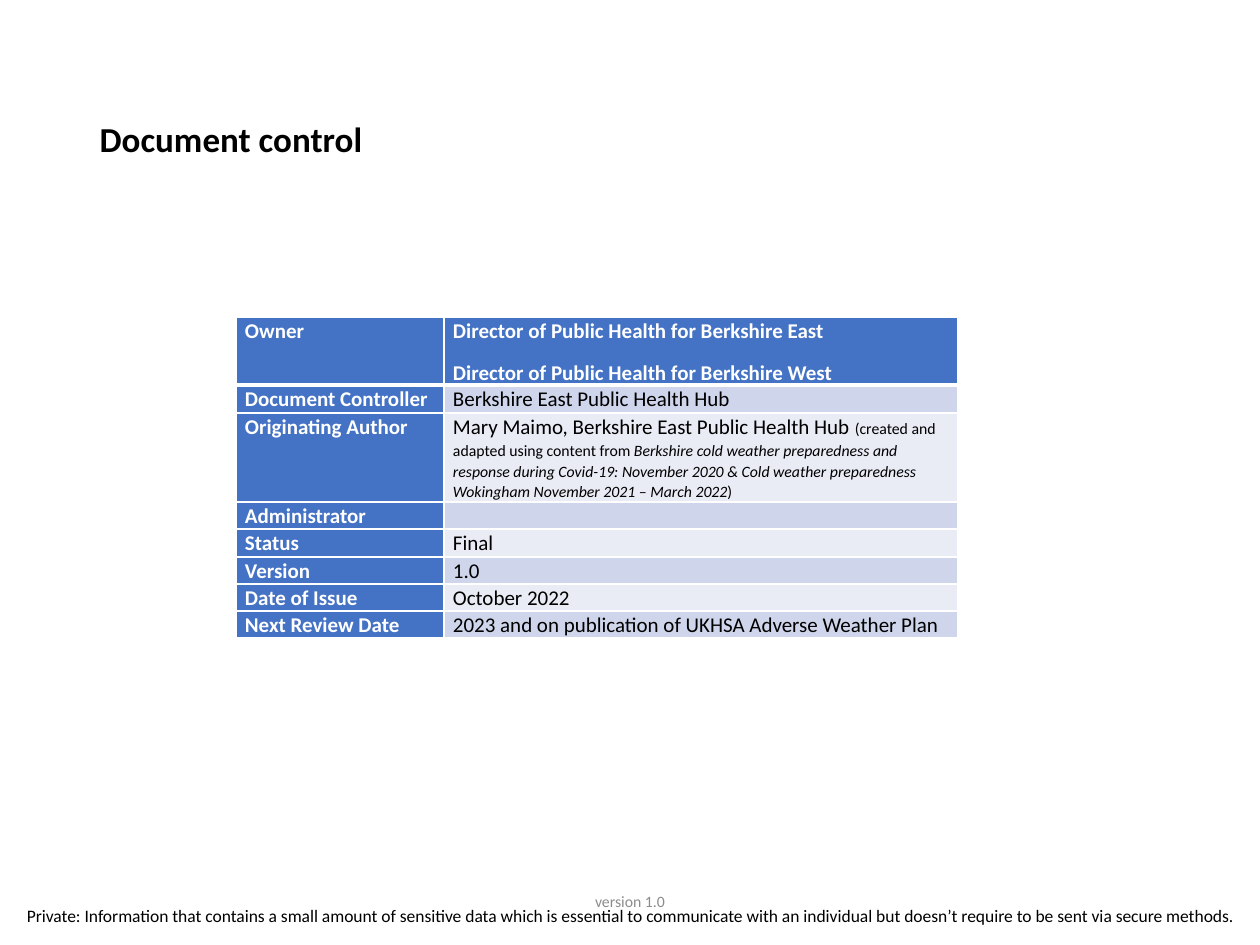
from lxml.etree import SubElement
from pptx import Presentation
from pptx.dml.color import RGBColor
from pptx.enum.text import MSO_ANCHOR, PP_ALIGN
from pptx.oxml.ns import qn
from pptx.util import Pt

PX = 7257.14  # EMU per pixel, 126 pixels to the inch
FONT = "Calibri"
BLACK, WHITE, GREY = "000000", "FFFFFF", "8C8C8C"
BLUE, BANDS = "4472C4", ("E9EBF5", "CFD5EA")

COLUMNS = (208, 514)
CELL_MARGIN = 9
# Each row: height, label, paragraphs of (text, size, italic) runs
ROWS = [
    (67, "Owner", [[("Director of Public Health for Berkshire East", 12, False)],
                   [("Director of Public Health for Berkshire West", 12, False)]]),
    (28, "Document Controller", [[("Berkshire East Public Health Hub", 12, False)]]),
    (89, "Originating Author", [[
        ("Mary Maimo, Berkshire East Public Health Hub ", 12, False),
        ("(created and adapted using content from ", 9, False),
        ("Berkshire cold weather preparedness and response during Covid-19: "
         "November 2020 & Cold weather preparedness Wokingham November 2021 – March 2022", 9, True),
        (")", 9, False)]]),
    (27, "Administrator", [[]]),
    (28, "Status", [[("Final", 12, False)]]),
    (27, "Version", [[("1.0", 12, False)]]),
    (27, "Date of Issue", [[("October 2022", 12, False)]]),
    (27, "Next Review Date", [[("2023 and on publication of UKHSA Adverse Weather Plan", 12, False)]]),
]


def px(length):
    return round(length * PX)


def rgb(value):
    return RGBColor.from_string(value)


def style_font(font, size, color, bold=False, italic=False):
    font.name, font.size = FONT, Pt(size)
    font.bold, font.italic = bold, italic
    font.color.rgb = rgb(color)


def add_title(slide, text, left, top, width, height):
    title = slide.shapes.title
    title.left, title.top, title.width, title.height = map(px, (left, top, width, height))
    frame = title.text_frame
    frame.text = text
    frame.vertical_anchor = MSO_ANCHOR.MIDDLE
    para = frame.paragraphs[0]
    para.alignment, para.line_spacing = PP_ALIGN.LEFT, 0.9
    style_font(para.font, 20, BLACK, bold=True)


def add_centred_text(slide, text, left, top, width, height, size, color):
    box = slide.shapes.add_textbox(*map(px, (left, top, width, height)))
    frame = box.text_frame
    frame.word_wrap = True
    frame.vertical_anchor = MSO_ANCHOR.MIDDLE
    frame.margin_left = frame.margin_right = frame.margin_top = frame.margin_bottom = 0
    para = frame.paragraphs[0]
    para.text, para.alignment = text, PP_ALIGN.CENTER
    style_font(para.font, size, color)


def set_borders(cell, bottom):
    properties = cell._tc.get_or_add_tcPr()
    widths = {"a:lnL": 1, "a:lnR": 1, "a:lnT": 1, "a:lnB": bottom}
    for position, (side, width) in enumerate(widths.items()):
        line = SubElement(properties, qn(side), w=str(Pt(width)))
        fill = SubElement(line, qn("a:solidFill"))
        SubElement(fill, qn("a:srgbClr"), val=WHITE)
        properties.insert(position, line)  # borders come before the fill


def fill_cell(cell, paragraphs, fill, color, bold, bottom):
    cell.margin_left = cell.margin_right = px(CELL_MARGIN)
    cell.margin_top = cell.margin_bottom = 0
    cell.fill.solid()
    cell.fill.fore_color.rgb = rgb(fill)
    set_borders(cell, bottom)
    frame = cell.text_frame
    for index, runs in enumerate(paragraphs):
        para = frame.add_paragraph() if index else frame.paragraphs[0]
        para.line_spacing, para.space_after = 1.07, Pt(8)
        for text, size, italic in runs:
            span = para.add_run()
            span.text = text
            style_font(span.font, size, color, bold, italic)
        if not runs:  # keeps the empty cell as low as its row
            SubElement(para._p, qn("a:endParaRPr"), sz="1200")


def add_control_table(slide, left, top):
    height = sum(row[0] for row in ROWS)
    frame = slide.shapes.add_table(len(ROWS), len(COLUMNS),
                                   *map(px, (left, top, sum(COLUMNS), height)))
    table = frame.table
    table.first_col = True
    for column, width in zip(table.columns, COLUMNS):
        column.width = px(width)
    for index, (height, label, paragraphs) in enumerate(ROWS):
        header = index == 0
        bottom = 3 if header else 1
        table.rows[index].height = px(height)
        fill_cell(table.cell(index, 0), [[(label, 12, False)]], BLUE, WHITE, True, bottom)
        fill_cell(table.cell(index, 1), paragraphs,
                  BLUE if header else BANDS[index % 2],
                  WHITE if header else BLACK, header, bottom)


def main():
    deck = Presentation()
    deck.slide_width, deck.slide_height = px(1260), px(945)
    page = deck.slides.add_slide(deck.slide_layouts[5])

    # Privacy marking along the bottom edge
    add_centred_text(page, "Private: Information that contains a small amount of sensitive data "
                     "which is essential to communicate with an individual but doesn’t require "
                     "to be sent via secure methods.", 0, 886, 1260, 59, 10, BLACK)
    # Heading and table
    add_title(page, "Document control", 87, 50, 1086, 183)
    add_control_table(page, 236, 317)
    # Footer
    add_centred_text(page, "version 1.0", 417, 876, 426, 50, 9, GREY)

    deck.save("out.pptx")


if __name__ == "__main__":
    main()
